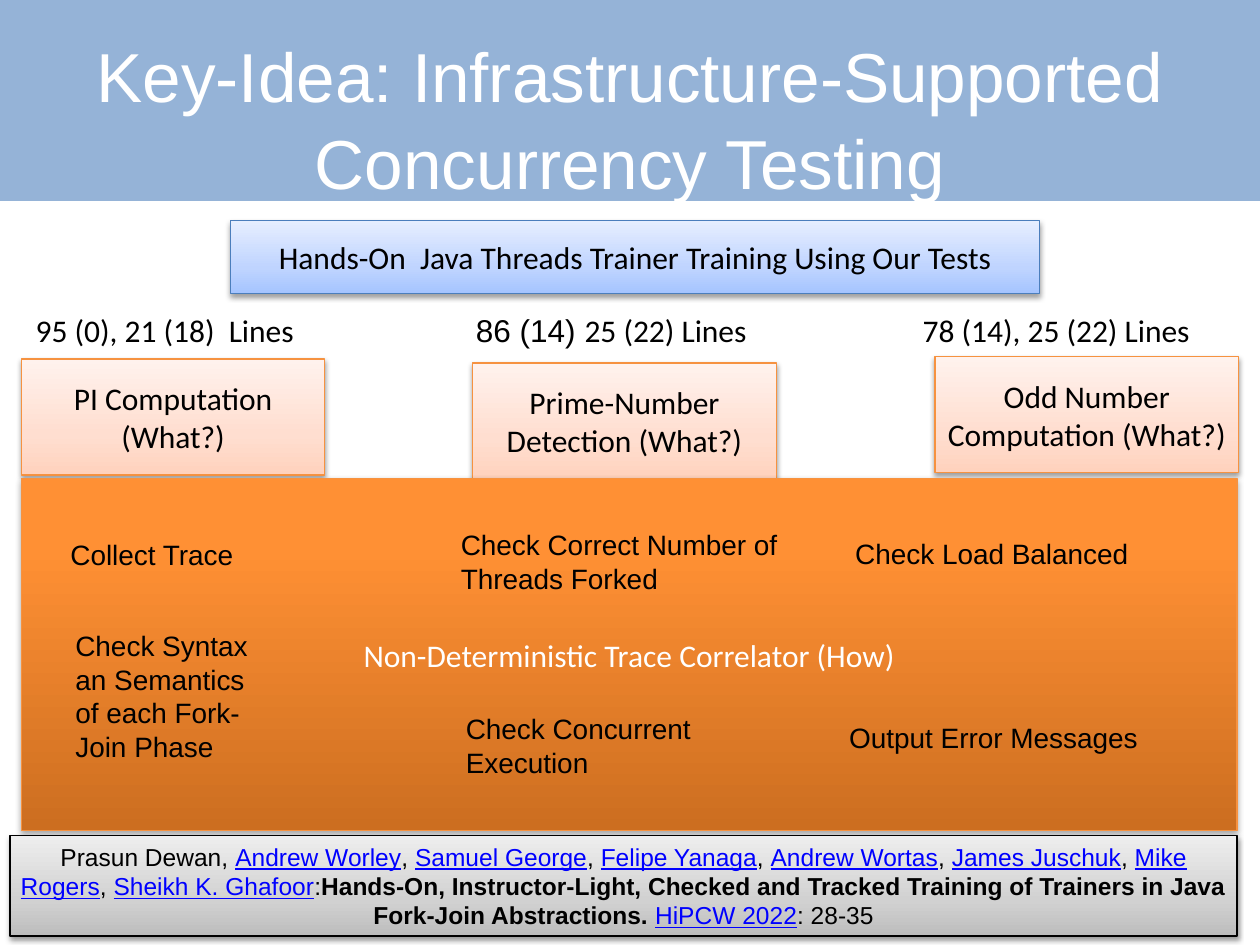
from lxml import etree
from pptx import Presentation
from pptx.dml.color import RGBColor
from pptx.enum.shapes import MSO_SHAPE
from pptx.enum.text import MSO_ANCHOR, MSO_AUTO_SIZE, PP_ALIGN
from pptx.oxml.ns import qn
from pptx.util import Cm, Pt

RECT = MSO_SHAPE.RECTANGLE
MIDDLE = MSO_ANCHOR.MIDDLE
CENTER, LEFT = PP_ALIGN.CENTER, PP_ALIGN.LEFT
FIXED, GROW = MSO_AUTO_SIZE.NONE, MSO_AUTO_SIZE.SHAPE_TO_FIT_TEXT

PEACH = [(0, "FFD2BD"), (35, "FFDED0"), (100, "FFF2ED")]
ORANGE = [(0, "CC6E20"), (80, "FF9034"), (100, "FF9136")]
BLUE = [(0, "A4C4FF"), (35, "BFD4FF"), (100, "E6EEFF")]
GRAY = [(0, "BDBDBD"), (35, "D1D1D1"), (100, "EEEEEE")]
LINK = dict(color="0000FF", underline=True)


def rgb(value):
    return RGBColor.from_string(value)


def add_run(p, text, font="Calibri", size=18, color="000000", bold=False, underline=False):
    r = p.add_run()
    r.text = text
    r.font.name = font
    r.font.size = Pt(size)
    r.font.bold = bold
    r.font.underline = underline
    r.font.color.rgb = rgb(color)


def add_color(parent, value, alpha=None):
    clr = etree.SubElement(parent, qn("a:srgbClr"), val=value)
    if alpha is not None:
        etree.SubElement(clr, qn("a:alpha"), val=str(alpha * 1000))


class Deck:
    font = "Arial"
    banner_color = "95B3D7"

    def __init__(self):
        self.prs = Presentation()
        self.prs.slide_width, self.prs.slide_height = Cm(25.4), Cm(19.05)
        self.s = self.prs.slides.add_slide(self.prs.slide_layouts[5])

    def place(self, sp, at):
        sp.left, sp.top, sp.width, sp.height = [Cm(v) for v in at]

    def fill_text(self, tf, runs, align, **fmt):
        p = tf.paragraphs[0]
        p.alignment = align
        for text, extra in runs:
            add_run(p, text, **{**fmt, **extra})
        return p

    def rect(self, at, line, width):
        sp = self.s.shapes.add_shape(RECT, *[Cm(v) for v in at])
        sp.shadow.inherit = False
        sp.line.color.rgb = rgb(line)
        sp.line.width = Pt(width)
        return sp

    def banner(self, at):
        sp = self.rect(at, self.banner_color, 2)
        sp.fill.solid()
        sp.fill.fore_color.rgb = rgb(self.banner_color)
        self.s.shapes._spTree.insert(2, sp._element)

    def title(self, text, at):
        sp = self.s.shapes.title
        self.place(sp, at)
        tf = sp.text_frame
        tf.auto_size = FIXED
        tf.vertical_anchor = MIDDLE
        p = self.fill_text(tf, [(text, {})], CENTER, font=self.font, size=39.6, color="FFFFFF")
        p.line_spacing = 1.05

    def box(self, runs, at, stops, line, alpha=38, dist=1.6, **fmt):
        sp = self.rect(at, line, 0.75)
        sp.fill.gradient()
        sp.fill.gradient_angle = 90
        spPr = sp._element.spPr
        gs_list = spPr.find(".//" + qn("a:gsLst"))
        gs_list[:] = []
        for pos, color in stops:
            add_color(etree.SubElement(gs_list, qn("a:gs"), pos=str(pos * 1000)), color)
        shadow = etree.SubElement(
            spPr.find(qn("a:effectLst")), qn("a:outerShdw"), blurRad=str(Pt(3.1)),
            dist=str(Pt(dist)), dir="5400000", rotWithShape="0")
        add_color(shadow, "000000", alpha)
        tf = sp.text_frame
        tf.word_wrap = True
        tf.vertical_anchor = MIDDLE
        tf.margin_left = tf.margin_right = Cm(0.1)
        tf.margin_top = tf.margin_bottom = Cm(0.13)
        self.fill_text(tf, runs, CENTER, **fmt)

    def text(self, runs, at, align=LEFT, wrap=True, **fmt):
        sp = self.s.shapes.add_textbox(*[Cm(v) for v in at])
        tf = sp.text_frame
        tf.word_wrap = wrap
        tf.auto_size = GROW
        self.fill_text(tf, runs, align, **fmt)


def main():
    deck = Deck()
    deck.banner((0, 0, 25.4, 4.01))
    deck.title("Key-Idea: Infrastructure-Supported Concurrency Testing", (1.27, 0.76, 22.86, 3.18))

    for text, x, y in [
        ("Prime-Number Detection (What?)", 9.53, 7.32),
        ("PI Computation (What?)", 0.43, 7.24),
        ("Odd Number Computation (What?)", 18.85, 7.19),
    ]:
        deck.box([(text, {})], (x, y, 6.12, 2.34), PEACH, "F69240")
    deck.box([("Non-Deterministic Trace Correlator (How)", {})], (0.43, 9.65, 24.51, 7.09),
             ORANGE, "F69240", alpha=35, dist=1.8, color="FFFFFF")
    deck.box([("Hands-On  Java Threads Trainer Training Using Our Tests", {})],
             (4.65, 4.45, 16.31, 1.47), BLUE, "4B7EBC")

    authors = ["Andrew Worley", "Samuel George", "Felipe Yanaga", "Andrew Wortas",
               "James Juschuk", "Mike Rogers", "Sheikh K. Ghafoor"]
    citation = [("Prasun Dewan", {})]
    for author in authors:
        citation += [(", ", {}), (author, LINK)]
    citation += [
        (":", {}),
        ("Hands-On, Instructor-Light, Checked and Tracked Training of Trainers "
         "in Java Fork-Join Abstractions. ", dict(bold=True)),
        ("HiPCW 2022", LINK),
        (": 28-35", {}),
    ]
    deck.box(citation, (0.2, 16.84, 24.74, 2.03), GRAY, "000000", font=deck.font, size=14)

    for runs, x, w in [
        ([("95 (0), 21 (18)  Lines", {})], 0.43, 5.79),
        ([("86 (14) ", dict(font=deck.font)), ("25 (22) Lines", {})], 9.3, 6.05),
        ([("78 (14), 25 (22) Lines", {})], 18.31, 5.97),
    ]:
        deck.text(runs, (x, 6.15, w, 1.02), align=CENTER, wrap=False)

    for text, *at in [
        ("Collect Trace", 1.17, 10.72, 4.65, 0.94),
        ("Check Syntax an Semantics  of each Fork-Join Phase", 1.27, 12.55, 4.65, 3),
        ("Check Correct Number of Threads Forked", 9.04, 10.52, 7.32, 1.63),
        ("Check Load Balanced", 16.99, 10.69, 7.32, 0.94),
        ("Check Concurrent Execution", 9.14, 14.22, 7.32, 1.63),
        ("Output Error Messages", 16.87, 14.4, 7.32, 0.94),
    ]:
        deck.text([(text, {})], at, font=deck.font, size=16)

    deck.prs.save("out.pptx")


if __name__ == "__main__":
    main()
